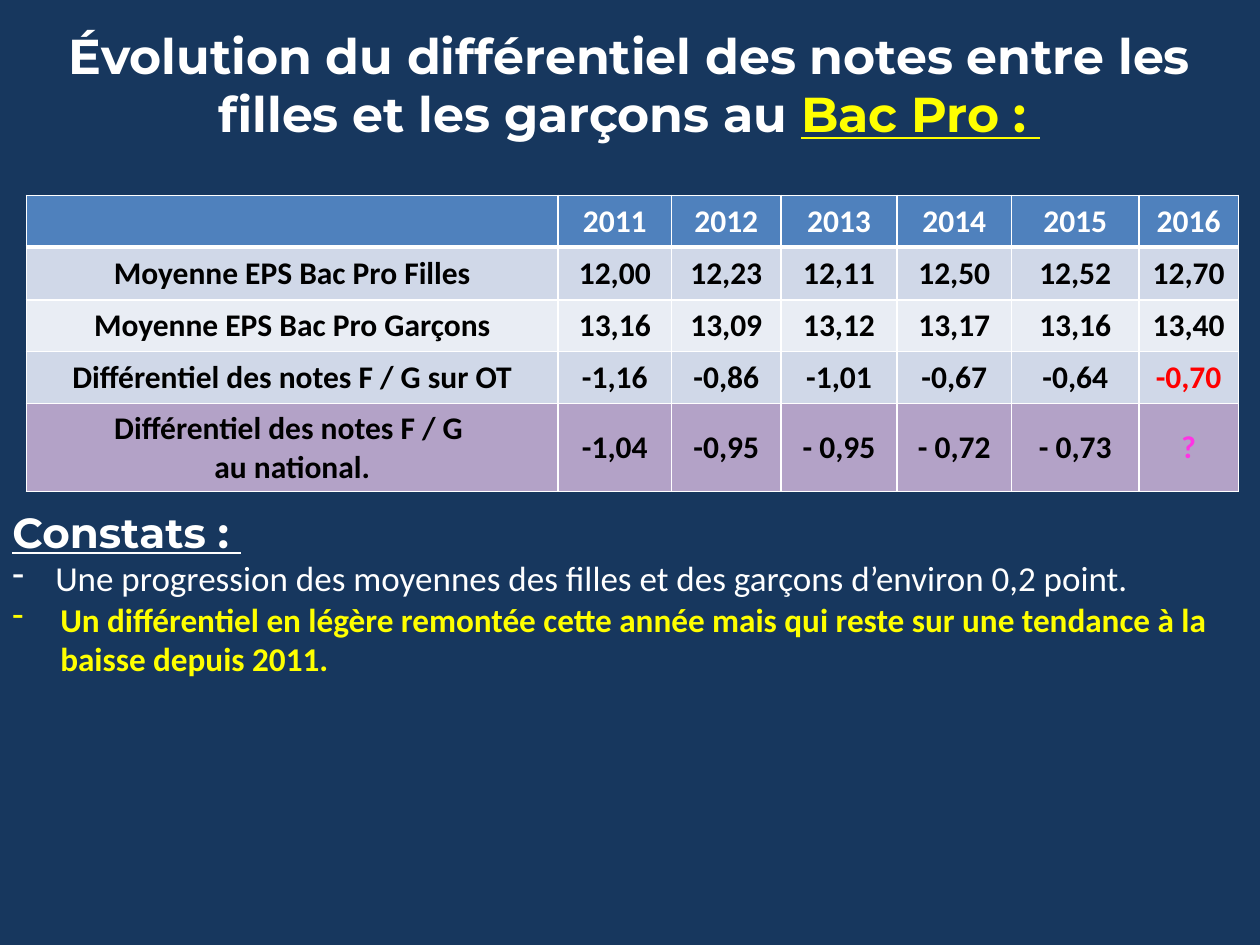
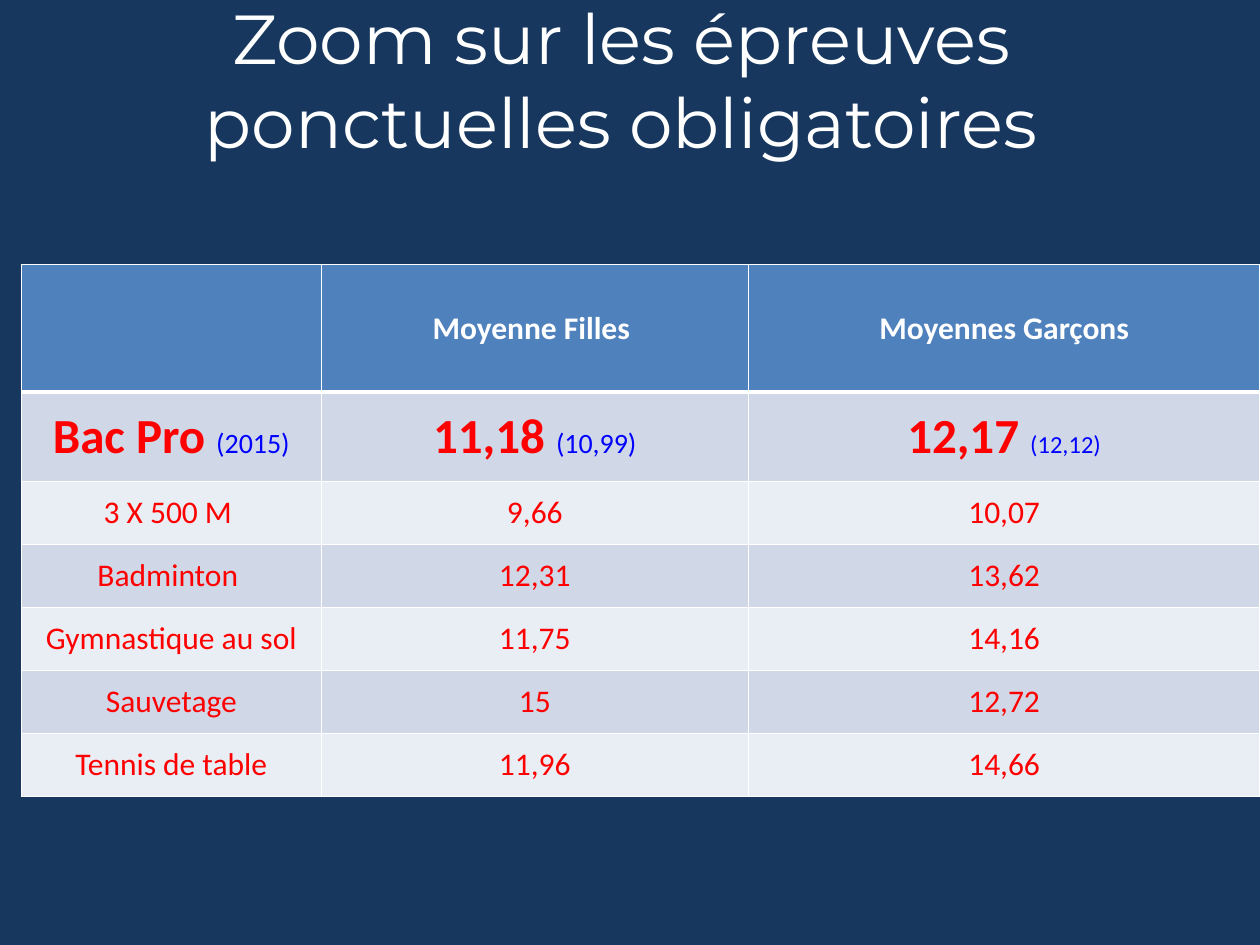
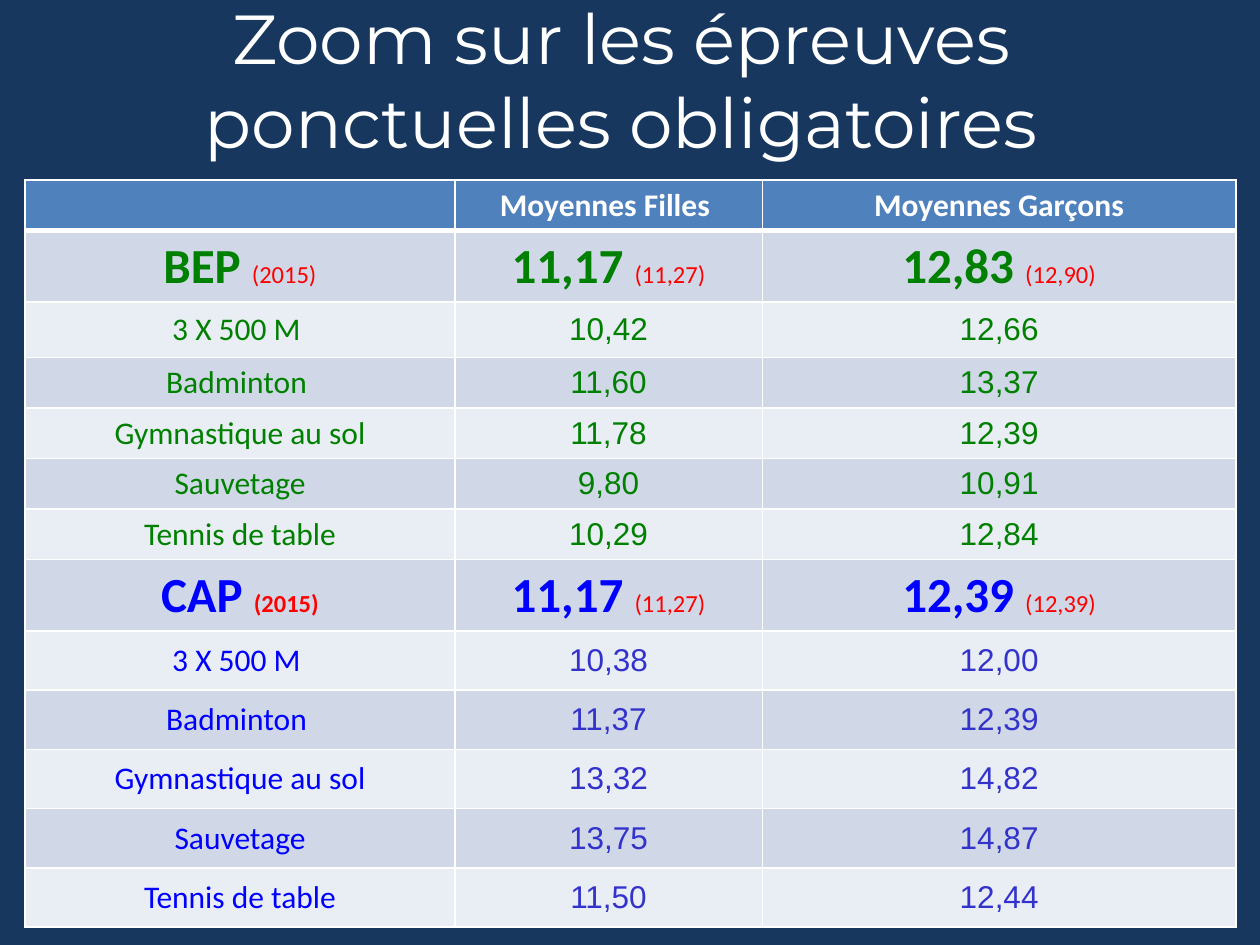
import pptx
import pptx.dml.color
import pptx.enum.text
import pptx.oxml
import pptx.oxml.ns
import pptx.util

COLORS = {
    "navy": "17375E", "white": "FFFFFF", "black": "000000", "yellow": "FFFF00",
    "header": "4F81BD", "band": "D0D8E8", "light": "E9EDF4", "purple": "B3A2C7",
    "red": "FF0000", "pink": "FF33E4", "green": "008000", "blue": "0000FF",
    "indigo": "3333CC",
}
CENTER = pptx.enum.text.PP_ALIGN.CENTER
LEFT = pptx.enum.text.PP_ALIGN.LEFT
MIDDLE = pptx.enum.text.MSO_ANCHOR.MIDDLE
TOP = pptx.enum.text.MSO_ANCHOR.TOP
BANDS = ["band", "light"]
HEADER_LINE, GRID_LINE = 3, 1


def write(frame, paragraphs, align=CENTER):
    """Fill a frame; a span is (text, size, color) plus optional font settings."""
    for index, spans in enumerate(paragraphs):
        para = frame.paragraphs[0] if index == 0 else frame.add_paragraph()
        para.alignment = align
        for text, size, color, *settings in spans:
            span = para.add_run()
            span.text = text
            span.font.size = pptx.util.Pt(size)
            span.font.color.rgb = pptx.dml.color.RGBColor.from_string(COLORS[color])
            span.font.name = next((s for s in settings if s in ("Montserrat", "Arial")), "Calibri")
            span.font.bold = "bold" in settings
            span.font.underline = "underline" in settings


def draw_table(page, left, top, columns, rows, grid, fills):
    """Draw a table; lengths are percentages of the slide, grid cells are paragraphs."""
    table = page.shapes.add_table(
        len(rows), len(columns), int(left * UNIT_X), int(top * UNIT_Y),
        int(sum(columns) * UNIT_X), int(sum(rows) * UNIT_Y)).table
    for column, width in zip(table.columns, columns):
        column.width = int(width * UNIT_X)
    for row_index, (row, height) in enumerate(zip(table.rows, rows)):
        row.height = int(height * UNIT_Y)
        for cell, paragraphs in zip(row.cells, grid[row_index]):
            cell.vertical_anchor = MIDDLE
            write(cell.text_frame, paragraphs)
            widths = {"L": GRID_LINE, "R": GRID_LINE,
                      "T": HEADER_LINE if row_index == 1 else GRID_LINE,
                      "B": HEADER_LINE if row_index == 0 else GRID_LINE}
            for side, points in widths.items():
                cell._tc.get_or_add_tcPr().append(pptx.oxml.parse_xml(
                    f'<a:ln{side} {pptx.oxml.ns.nsdecls("a")} w="{pptx.util.Pt(points)}">'
                    f'<a:solidFill><a:srgbClr val="{COLORS["white"]}"/></a:solidFill></a:ln{side}>'))
            cell.fill.solid()
            cell.fill.fore_color.rgb = pptx.dml.color.RGBColor.from_string(COLORS[fills[row_index]])


deck = pptx.Presentation()
deck.slide_width = pptx.util.Inches(10)
deck.slide_height = pptx.util.Inches(7.5)
UNIT_X = deck.slide_width // 100
UNIT_Y = deck.slide_height // 100
background = deck.slide_master.background.fill
background.solid()
background.fore_color.rgb = pptx.dml.color.RGBColor.from_string(COLORS["navy"])
pages = [deck.slides.add_slide(deck.slide_layouts[6]) for _ in range(3)]

# Text boxes of all slides: page, left, top, width, height, anchor, alignment, paragraphs
trend_title = [[
    ("Évolution du différentiel des notes entre les filles et les garçons au ",
     28, "white", "Montserrat", "bold"),
    ("Bac Pro : ", 28, "yellow", "Montserrat", "bold", "underline")]]
findings = [
    [("Constats : ", 24, "white", "Montserrat", "bold", "underline")],
    [("Une progression des moyennes des filles et des garçons d’environ 0,2 point.", 20, "white")],
    [("Un différentiel en légère remontée cette année mais qui reste sur une tendance "
      "à la baisse depuis 2011.", 19, "yellow", "bold")]]
zoom_title = [[("Zoom sur les épreuves ponctuelles obligatoires", 39.6, "white", "Montserrat")]]
text_boxes = [
    (pages[0], 2.8, 2, 94.3, 13.87, TOP, CENTER, trend_title),
    (pages[0], 0, 52.93, 98.9, 24.27, TOP, LEFT, findings),
    (pages[1], 4.3, 0, 90, 16.67, MIDDLE, CENTER, zoom_title),
    (pages[2], 4.3, 0, 90, 16.67, MIDDLE, CENTER, zoom_title),
]
for page, left, top, width, height, anchor, align, paragraphs in text_boxes:
    box = page.shapes.add_textbox(int(left * UNIT_X), int(top * UNIT_Y),
                                  int(width * UNIT_X), int(height * UNIT_Y))
    box.text_frame.word_wrap = True
    box.text_frame.vertical_anchor = anchor
    write(box.text_frame, paragraphs, align)
    if paragraphs is findings:
        for para, indent in zip(box.text_frame.paragraphs[1:], (3.4, 3.8)):
            properties = para._p.get_or_add_pPr()
            properties.set("marL", str(int(indent * UNIT_X)))
            properties.set("indent", str(-int(indent * UNIT_X)))
            properties.append(pptx.oxml.parse_xml(
                f'<a:buChar {pptx.oxml.ns.nsdecls("a")} char="-"/>'))

# Slide 1: yearly averages
trend_rows = [
    ["", "2011", "2012", "2013", "2014", "2015", "2016"],
    ["Moyenne EPS Bac Pro Filles", "12,00", "12,23", "12,11", "12,50", "12,52", "12,70"],
    ["Moyenne EPS Bac Pro Garçons", "13,16", "13,09", "13,12", "13,17", "13,16", "13,40"],
    ["Différentiel des notes F / G sur OT", "-1,16", "-0,86", "-1,01", "-0,67", "-0,64", "-0,70"],
    ["Différentiel des notes F / G \nau national.",
     "-1,04", "-0,95", "- 0,95", "- 0,72", "- 0,73", "?"],
]
marked = {(0, column): "white" for column in range(7)} | {(3, 6): "red", (4, 6): "pink"}
trend_grid = [
    [[[(line, 18, marked.get((row, column), "black"), "bold")] for line in text.split("\n") if line]
     for column, text in enumerate(texts)]
    for row, texts in enumerate(trend_rows)]
draw_table(pages[0], 2.1, 20.67, [42.2, 9, 8.7, 9.2, 9.1, 10.1, 7.9],
           [5.47, 5.6, 5.47, 5.47, 9.07], trend_grid, ["header"] + BANDS + ["band", "purple"])

# Slides 2 and 3: one block per diploma, a summary row followed by five events
events = ["3 X 500 M ", "Badminton ", "Gymnastique au sol", "Sauvetage", "Tennis de table"]
bac_pro = {
    "summary": [("Bac Pro ", "(2015)", 16), ("11,18 ", "(10,99)", 16), ("12,17 ", "(12,12)", 14)],
    "girls": ["9,66", "12,31", "11,75", "15", "11,96"],
    "boys": ["10,07", "13,62", "14,16", "12,72", "14,66"],
    "color": "red", "past": "blue", "figures": ("red",), "bold_past": False}
bep = {
    "summary": [("BEP ", "(2015)", 14), ("11,17 ", "(11,27)", 14), ("12,83 ", "(12,90)", 14)],
    "girls": ["10,42", "11,60", "11,78", "9,80", "10,29"],
    "boys": ["12,66", "13,37", "12,39", "10,91", "12,84"],
    "color": "green", "past": "red", "figures": ("green", "Arial"), "bold_past": False}
cap = {
    "summary": [("CAP ", "(2015)", 14), ("11,17 ", "(11,27)", 14), ("12,39 ", "(12,39)", 14)],
    "girls": ["10,38", "11,37", "13,32", "13,75", "11,50"],
    "boys": ["12,00", "12,39", "14,82", "14,87", "12,44"],
    "color": "blue", "past": "red", "figures": ("indigo", "Arial"), "bold_past": True}
zooms = [
    (pages[1], 1.7, 28, [23.8, 33.9, 40.6], [13.47, 9.47] + [6.67] * 5,
     "Moyenne Filles ", [bac_pro]),
    (pages[2], 2, 19.07, [34.1, 24.4, 37.6],
     [5.07, 7.2, 5.87] + [5.07] * 4 + [7.2] + [6.27] * 5, "Moyennes Filles ", [bep, cap]),
]
for page, left, top, columns, rows, girls_heading, diplomas in zooms:
    grid = [[[]] + [[[(heading, 18, "white", "bold")]]
                    for heading in (girls_heading, "Moyennes Garçons")]]
    for diploma in diplomas:
        summary = []
        for column, (score, past, size) in enumerate(diploma["summary"]):
            weight = ["bold"] if diploma["bold_past"] and column == 0 else []
            summary.append([[(score, 28, diploma["color"], "bold"),
                             (past, size, diploma["past"], *weight)]])
        grid.append(summary)
        for event, girls, boys in zip(events, diploma["girls"], diploma["boys"]):
            grid.append([[[(event, 18, diploma["color"])]]]
                        + [[[(score, 18, *diploma["figures"])]] for score in (girls, boys)])
    fills = ["header"] + BANDS * (len(rows) // 2)
    draw_table(page, left, top, columns, rows, grid, fills)

deck.save("out.pptx")
